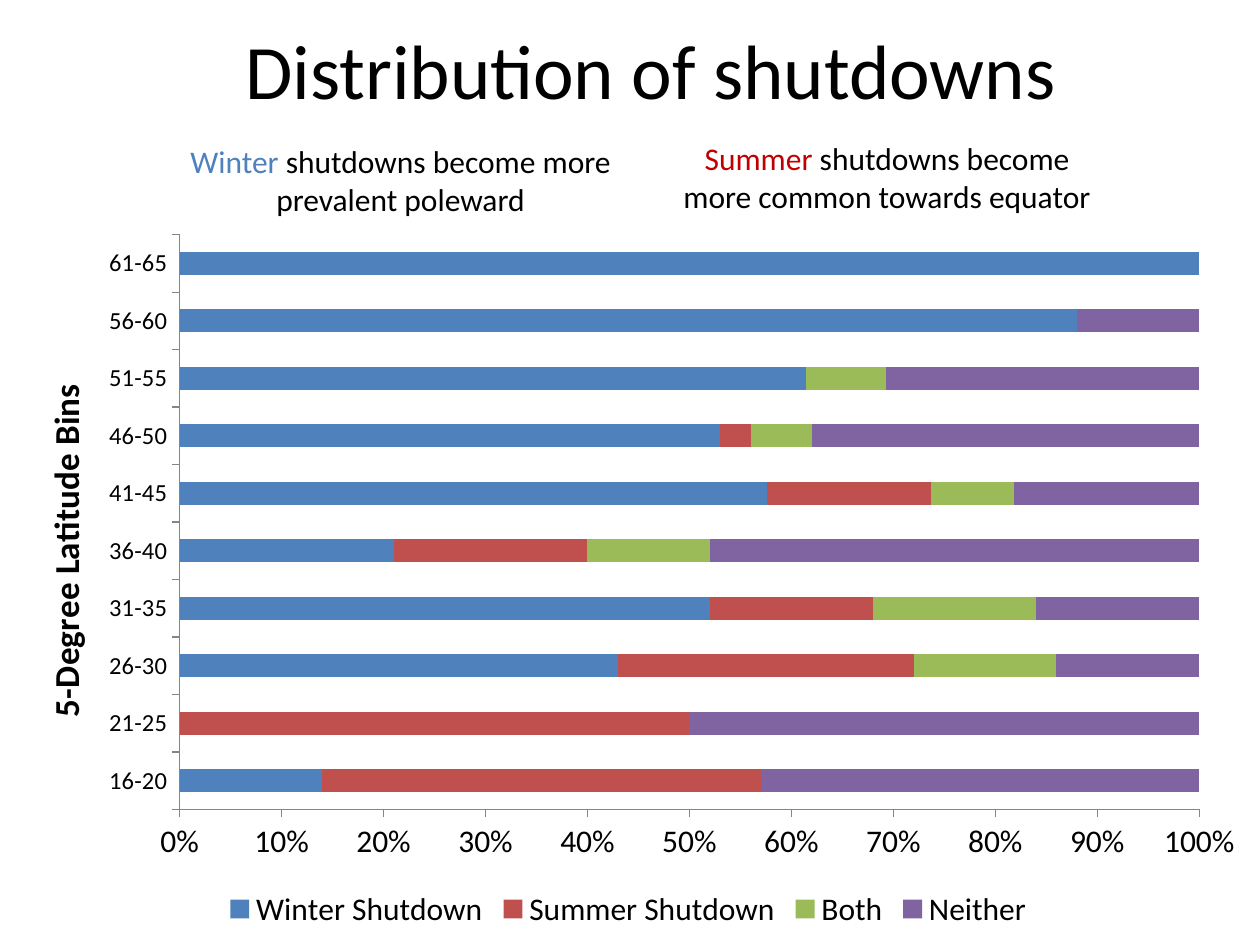
from lxml.etree import SubElement
from pptx import Presentation
from pptx.chart.data import CategoryChartData
from pptx.dml.color import RGBColor
from pptx.enum.chart import XL_CHART_TYPE, XL_LEGEND_POSITION, XL_TICK_MARK
from pptx.enum.text import MSO_ANCHOR, PP_ALIGN
from pptx.oxml.ns import qn
from pptx.util import Pt

FONT = "Calibri"
COLORS = {
    "text": "000000", "axis": "868686", "summer_text": "C00000",
    "winter": "4F81BD", "summer": "C0504D", "both": "9BBB59", "neither": "8064A2",
}
BINS = ["16-20", "21-25", "26-30", "31-35", "36-40",
        "41-45", "46-50", "51-55", "56-60", "61-65"]
SERIES = [
    ("Winter Shutdown", "winter", (14, 0, 43, 52, 21, 57, 53, 62, 88, 100)),
    ("Summer Shutdown", "summer", (43, 50, 29, 16, 19, 16, 3, 0, 0, 0)),
    ("Both", "both", (0, 0, 14, 16, 12, 8, 6, 8, 0, 0)),
    ("Neither", "neither", (43, 50, 14, 16, 48, 18, 38, 31, 12, 0)),
]
TEXTS = [
    ((100, 77.8, 257.8, 51), 18, MSO_ANCHOR.TOP,
     [("Winter", "winter"), (" shutdowns become more prevalent poleward", "text")]),
    ((378, 76, 257.8, 51), 18, MSO_ANCHOR.TOP,
     [("Summer ", "summer_text"), ("shutdowns become more common towards equator", "text")]),
    ((48, -6, 648, 90), 44, MSO_ANCHOR.MIDDLE,
     [("Distribution of shutdowns", "text")]),
]
CHART_BOX = (-2, 126, 722, 408)
PLOT_LAYOUT = {"layoutTarget": "inner", "xMode": "edge", "yMode": "edge",
               "x": 0.145, "y": 0.02, "w": 0.807, "h": 0.805}
AXIS_TITLE_LAYOUT = {"xMode": "edge", "yMode": "edge", "x": 0.03, "y": 0.22}


def rgb(name):
    return RGBColor.from_string(COLORS[name])


def style(font, size, color="text", bold=False):
    font.name, font.size, font.bold = FONT, Pt(size), bold
    font.color.rgb = rgb(color)


def set_layout(parent, index, values):
    for old in parent.findall(qn("c:layout")):
        parent.remove(old)
    layout = SubElement(parent, qn("c:layout"))
    parent.insert(index, layout)
    manual = SubElement(layout, qn("c:manualLayout"))
    for key, value in values.items():
        SubElement(manual, qn(f"c:{key}")).set("val", str(value))


def add_chart(slide):
    data = CategoryChartData()
    data.categories = BINS
    for name, _, values in SERIES:
        data.add_series(name, values)
    chart = slide.shapes.add_chart(
        XL_CHART_TYPE.BAR_STACKED_100, *map(Pt, CHART_BOX), data).chart
    chart.has_title = False
    style(chart.font, 14)

    plot = chart.plots[0]
    plot.gap_width, plot.overlap = 150, 100
    plot.vary_by_categories = False
    for series, (_, color, _) in zip(plot.series, SERIES):
        series.format.fill.solid()
        series.format.fill.fore_color.rgb = rgb(color)

    for axis, size in ((chart.category_axis, 14), (chart.value_axis, 18)):
        axis.has_major_gridlines = False
        axis.major_tick_mark = XL_TICK_MARK.OUTSIDE
        axis.minor_tick_mark = XL_TICK_MARK.NONE
        axis.format.line.color.rgb = rgb("axis")
        style(axis.tick_labels.font, size)

    values = chart.value_axis
    values.minimum_scale, values.maximum_scale, values.major_unit = 0, 1, 0.1
    values.tick_labels.number_format = "0%"
    values.tick_labels.number_format_is_linked = False

    title = chart.category_axis.axis_title
    r = title.text_frame.paragraphs[0].add_run()
    r.text = "5-Degree Latitude Bins"
    style(r.font, 20, bold=True)
    set_layout(title._element, 1, AXIS_TITLE_LAYOUT)
    set_layout(chart._chartSpace.chart.plotArea, 0, PLOT_LAYOUT)

    chart.has_legend = True
    chart.legend.position = XL_LEGEND_POSITION.BOTTOM
    chart.legend.include_in_layout = False
    style(chart.legend.font, 18)


def add_text(slide, box, size, anchor, runs):
    tf = slide.shapes.add_textbox(*map(Pt, box)).text_frame
    tf.word_wrap = True
    tf.vertical_anchor = anchor
    p = tf.paragraphs[0]
    p.alignment = PP_ALIGN.CENTER
    for text, color in runs:
        r = p.add_run()
        r.text = text
        style(r.font, size, color)


prs = Presentation()
prs.slide_width, prs.slide_height = Pt(720), Pt(540)
slide = prs.slides.add_slide(prs.slide_layouts[6])
add_chart(slide)
for item in TEXTS:
    add_text(slide, *item)
prs.save("out.pptx")
